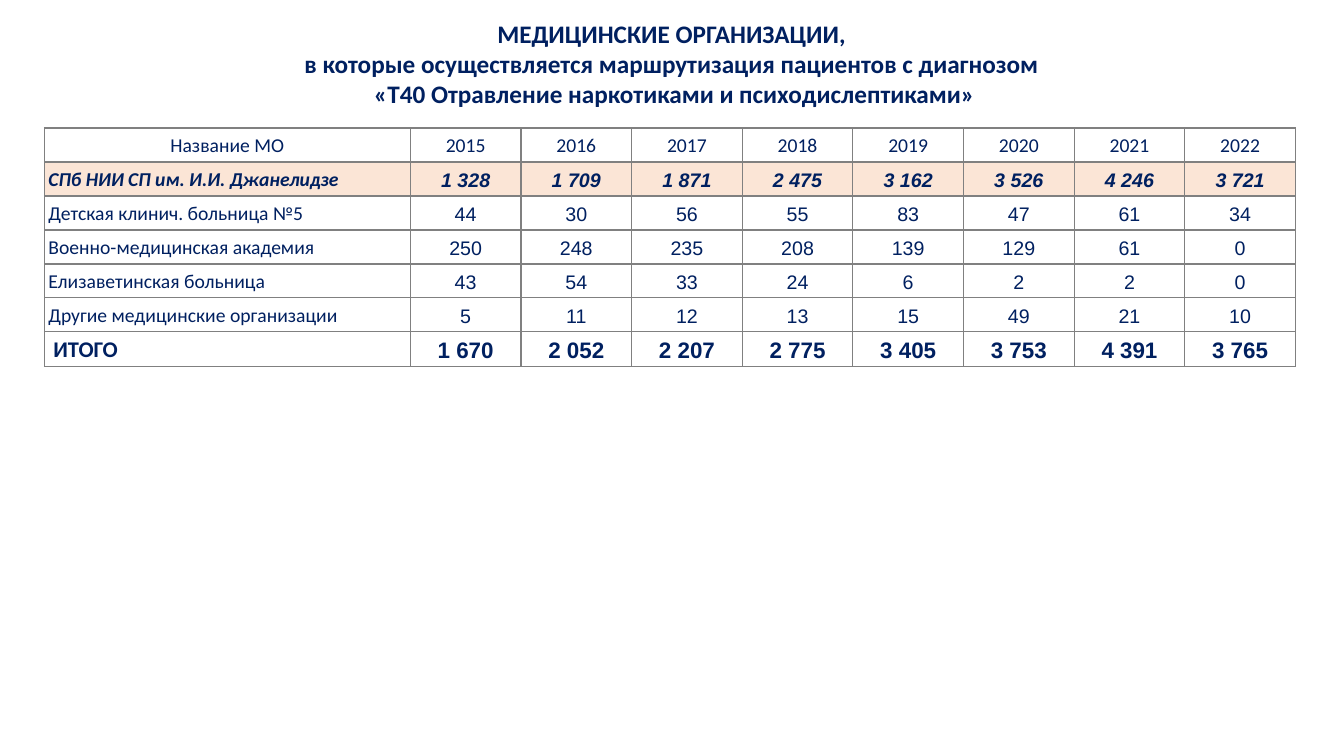
import dataclasses

import pptx
import pptx.dml.color
import pptx.enum.text
import pptx.oxml
import pptx.oxml.ns
import pptx.table
import pptx.util

Inches = pptx.util.Inches
Pt = pptx.util.Pt
RGBColor = pptx.dml.color.RGBColor
PP_ALIGN = pptx.enum.text.PP_ALIGN
MSO_ANCHOR = pptx.enum.text.MSO_ANCHOR

NAVY = RGBColor(0x00, 0x20, 0x60)
GREY = RGBColor(0x80, 0x80, 0x80)
PEACH = RGBColor(0xFB, 0xE5, 0xD6)
WHITE = RGBColor(0xFF, 0xFF, 0xFF)

HEADING = [
    "МЕДИЦИНСКИЕ ОРГАНИЗАЦИИ, ",
    "в которые осуществляется маршрутизация пациентов с диагнозом ",
    "«T40 Отравление наркотиками и психодислептиками»",
]
YEARS = range(2015, 2023)
PATIENTS = {
    "СПб НИИ СП им. И.И. Джанелидзе": [1328, 1709, 1871, 2475, 3162, 3526, 4246, 3721],
    "Детская клинич. больница №5": [44, 30, 56, 55, 83, 47, 61, 34],
    "Военно-медицинская академия": [250, 248, 235, 208, 139, 129, 61, 0],
    "Елизаветинская больница": [43, 54, 33, 24, 6, 2, 2, 0],
    "Другие медицинские организации": [5, 11, 12, 13, 15, 49, 21, 10],
}
TABLE_WIDTH = 12.41
TABLE_HEIGHT = 2.36
NAME_WIDTH = 3.63
YEAR_WIDTH = (TABLE_WIDTH - NAME_WIDTH) / len(YEARS)


@dataclasses.dataclass
class Row:
    name: str
    values: list[str]
    name_align: PP_ALIGN = PP_ALIGN.LEFT
    value_font: str = "Arial"
    size: int = 14
    bold: bool = False
    italic: bool = False
    fill: RGBColor | None = None


def spaced(numbers: list[int]) -> list[str]:
    return [f"{number:,}".replace(",", " ") for number in numbers]


def build_rows() -> list[Row]:
    header = Row("Название МО", [str(year) for year in YEARS],
                 name_align=PP_ALIGN.CENTER, value_font="Calibri", fill=WHITE)
    hospitals = [Row(name, spaced(counts)) for name, counts in PATIENTS.items()]
    leader = hospitals[0]
    leader.bold = leader.italic = True
    leader.fill = PEACH
    totals = [sum(counts) for counts in zip(*PATIENTS.values())]
    total = Row(" ИТОГО", spaced(totals), size=16, bold=True)
    return [header, *hospitals, total]


def add_borders(cell: pptx.table._Cell) -> None:
    properties = cell._tc.get_or_add_tcPr()
    for side in ("lnL", "lnR", "lnT", "lnB"):
        properties.append(pptx.oxml.parse_xml(
            f'<a:{side} {pptx.oxml.ns.nsdecls("a")} w="{Pt(1)}"><a:solidFill>'
            f'<a:srgbClr val="{GREY}"/></a:solidFill></a:{side}>'))


def fill_cell(cell: pptx.table._Cell, text: str, row: Row, font: str, align: PP_ALIGN) -> None:
    add_borders(cell)
    if row.fill is None:
        cell.fill.background()
    else:
        cell.fill.solid()
        cell.fill.fore_color.rgb = row.fill
    cell.margin_left = cell.margin_right = Inches(0.04)
    cell.margin_top = cell.margin_bottom = Inches(0.04)
    cell.vertical_anchor = MSO_ANCHOR.BOTTOM
    cell.text = text
    paragraph = cell.text_frame.paragraphs[0]
    paragraph.alignment = align
    paragraph.font.name = font
    paragraph.font.size = Pt(row.size)
    paragraph.font.bold = row.bold
    paragraph.font.italic = row.italic
    paragraph.font.color.rgb = NAVY


def add_heading(slide: pptx.slide.Slide) -> None:
    heading = slide.shapes.title
    heading.left, heading.top = Inches(0.66), Inches(0.13)
    heading.width, heading.height = Inches(12.06), Inches(1.01)
    frame = heading.text_frame
    frame.text = "\n".join(HEADING)
    frame.word_wrap = True
    frame.auto_size = pptx.enum.text.MSO_AUTO_SIZE.SHAPE_TO_FIT_TEXT
    frame.vertical_anchor = MSO_ANCHOR.TOP
    for paragraph in frame.paragraphs:
        paragraph.alignment = PP_ALIGN.CENTER
        paragraph.font.name = "Calibri"
        paragraph.font.size = Pt(18)
        paragraph.font.bold = True
        paragraph.font.color.rgb = NAVY


def add_patients_table(slide: pptx.slide.Slide, rows: list[Row]) -> None:
    table = slide.shapes.add_table(
        len(rows), len(YEARS) + 1, Inches(0.44), Inches(1.27),
        Inches(TABLE_WIDTH), Inches(TABLE_HEIGHT)).table
    table.first_row = table.horz_banding = False
    for index, column in enumerate(table.columns):
        column.width = Inches(YEAR_WIDTH if index else NAME_WIDTH)
    for index, row in enumerate(rows):
        table.rows[index].height = Inches(TABLE_HEIGHT / len(rows))
        fill_cell(table.cell(index, 0), row.name, row, "Calibri", row.name_align)
        for column, value in enumerate(row.values, start=1):
            fill_cell(table.cell(index, column), value, row, row.value_font, PP_ALIGN.CENTER)


def main() -> None:
    presentation = pptx.Presentation()
    presentation.slide_width = Inches(13.33)
    presentation.slide_height = Inches(7.5)
    slide = presentation.slides.add_slide(presentation.slide_layouts[5])
    add_heading(slide)
    add_patients_table(slide, build_rows())
    presentation.save("out.pptx")


if __name__ == "__main__":
    main()
